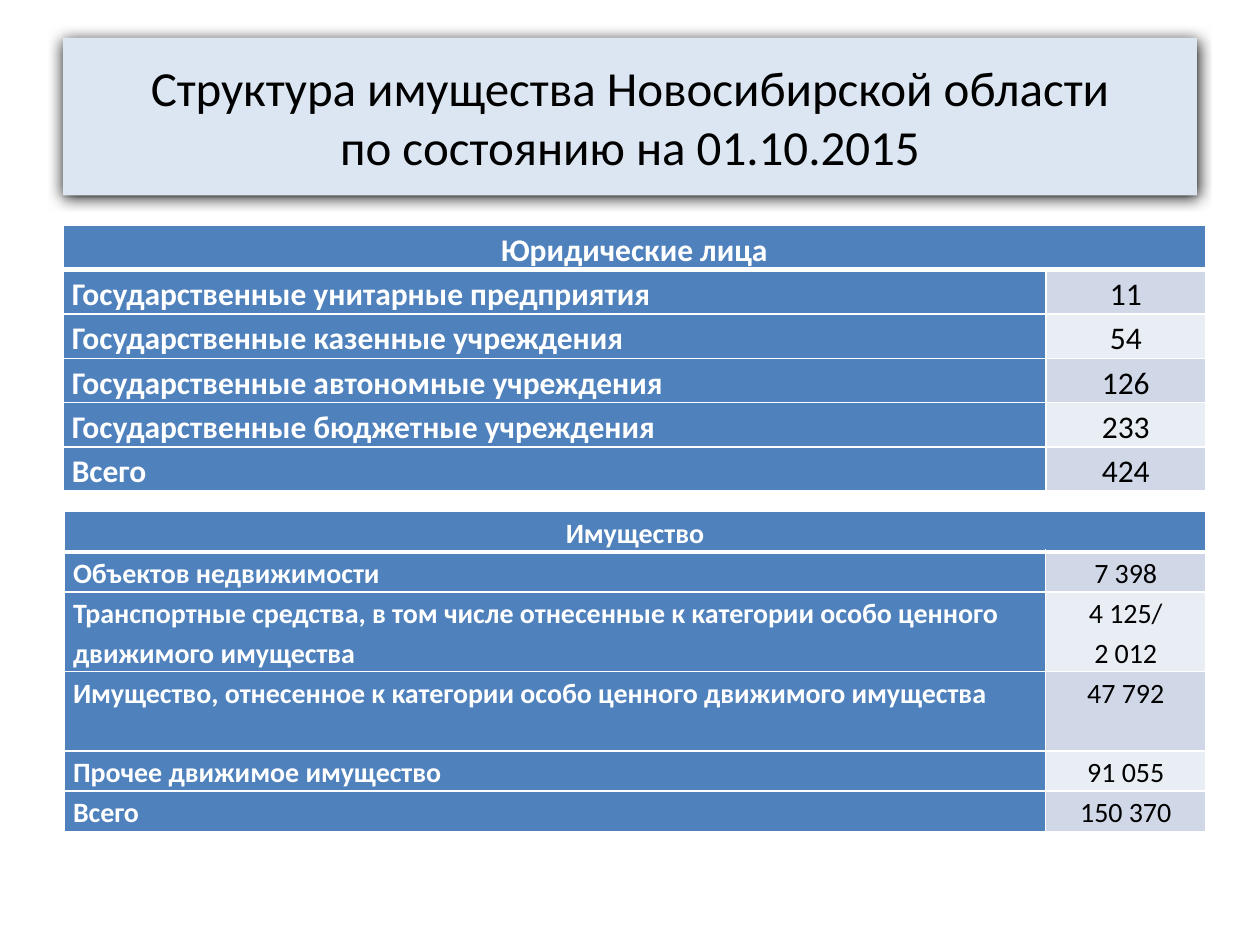
from lxml import etree
from pptx import Presentation, util as u
from pptx.dml.color import RGBColor
from pptx.enum import shapes, text
from pptx.oxml import parse_xml
from pptx.oxml.ns import nsdecls, qn

FONT = "Calibri"
WHITE, BLACK = "FFFFFF", "000000"
HEADING_FILL, TITLE_FILL = "4F81BD", "DCE6F2"
BAND_FILLS = ("D0D8E8", "E9EDF4")
THIN, THICK = 1, 3
VALUE_WIDTH = 1.27

LEGAL_ENTITIES = [
    ("Государственные унитарные предприятия", "11"),
    ("Государственные казенные учреждения", "54"),
    ("Государственные автономные учреждения", "126"),
    ("Государственные бюджетные учреждения", "233"),
    ("Всего", "424"),
]
PROPERTY = [
    ("Объектов недвижимости", "7 398"),
    ("Транспортные средства, в том числе отнесенные к категории особо ценного "
     "движимого имущества", "4 125/\n2 012"),
    ("Имущество, отнесенное к категории особо ценного движимого имущества", "47 792"),
    ("Прочее движимое имущество", "91 055"),
    ("Всего", "150 370"),
]


def color(hex_code):
    return RGBColor.from_string(hex_code)


def paint(item, hex_code):
    item.fill.solid()
    item.fill.fore_color.rgb = color(hex_code)


def style_paragraph(paragraph, size, hex_code, bold=False, centered=True):
    paragraph.alignment = text.PP_ALIGN.CENTER if centered else text.PP_ALIGN.LEFT
    font = paragraph.font
    font.name, font.size, font.bold = FONT, u.Pt(size), bold
    font.color.rgb = color(hex_code)


def add_glow_shadow(shape):
    """Give the shape a soft black shadow just below it."""
    shape.shadow.inherit = False
    effects = shape._element.spPr.find(qn("a:effectLst"))
    effects.append(parse_xml(
        f'<a:outerShdw {nsdecls("a")} blurRad="{u.Pt(8.5)}" dist="{u.Pt(1)}" '
        f'dir="5400000" algn="tl" rotWithShape="0">'
        f'<a:srgbClr val="{BLACK}"/></a:outerShdw>'))


def add_title(slide, wording):
    banner = slide.shapes.add_shape(
        shapes.MSO_SHAPE.RECTANGLE,
        u.Inches(0.5), u.Inches(0.3), u.Inches(9), u.Inches(1.25))
    paint(banner, TITLE_FILL)
    banner.line.fill.background()
    add_glow_shadow(banner)
    frame = banner.text_frame
    frame.word_wrap = True
    frame.vertical_anchor = text.MSO_ANCHOR.MIDDLE
    frame.paragraphs[0].text = wording
    style_paragraph(frame.paragraphs[0], 28, BLACK)


def set_borders(cell, top, bottom):
    properties = cell._tc.get_or_add_tcPr()
    for side, width in (("L", THIN), ("R", THIN), ("T", top), ("B", bottom)):
        border = etree.SubElement(properties, qn(f"a:ln{side}"), w=str(u.Pt(width)))
        fill = etree.SubElement(border, qn("a:solidFill"))
        etree.SubElement(fill, qn("a:srgbClr"), val=WHITE)


def fill_cell(cell, wording, size, fill, hex_code, bold, centered):
    paint(cell, fill)
    cell.margin_left = cell.margin_right = u.Inches(0.07)
    cell.margin_top = cell.margin_bottom = 0
    cell.text_frame.text = wording
    for paragraph in cell.text_frame.paragraphs:
        paragraph.line_spacing = 1.15
        style_paragraph(paragraph, size, hex_code, bold, centered)


def add_summary(slide, heading, entries, left, top, width, size, heights):
    """Add a table of labels and values under one merged heading row."""
    table = slide.shapes.add_table(
        len(heights), 2, u.Inches(left), u.Inches(top),
        u.Inches(width), u.Inches(sum(heights))).table
    table.columns[0].width = u.Inches(width - VALUE_WIDTH)
    table.columns[1].width = u.Inches(VALUE_WIDTH)
    for row, height in enumerate(heights):
        table.rows[row].height = u.Inches(height)
        for column in range(2):
            set_borders(table.cell(row, column),
                        top=THICK if row == 1 else THIN,
                        bottom=THICK if row == 0 else THIN)

    table.cell(0, 0).merge(table.cell(0, 1))
    fill_cell(table.cell(0, 0), heading, size, HEADING_FILL, WHITE, True, True)
    for row, (label, value) in enumerate(entries, start=1):
        fill_cell(table.cell(row, 0), label, size, HEADING_FILL, WHITE, True, False)
        fill_cell(table.cell(row, 1), value, size, BAND_FILLS[(row - 1) % 2],
                  BLACK, False, True)


def main():
    deck = Presentation()
    deck.slide_width, deck.slide_height = u.Inches(10), u.Inches(7.5)
    slide = deck.slides.add_slide(deck.slide_layouts[6])
    add_title(slide, "Структура имущества Новосибирской области\n"
                     "по состоянию на 01.10.2015")
    add_summary(slide, "Юридические лица", LEGAL_ENTITIES,
                0.5, 1.79, 9.07, 18, [0.34] * 6)
    single, double = 0.32, 0.63
    add_summary(slide, "Имущество", PROPERTY, 0.51, 4.06, 9.06, 16,
                [single, single, double, double, single, single])
    deck.save("out.pptx")


if __name__ == "__main__":
    main()
